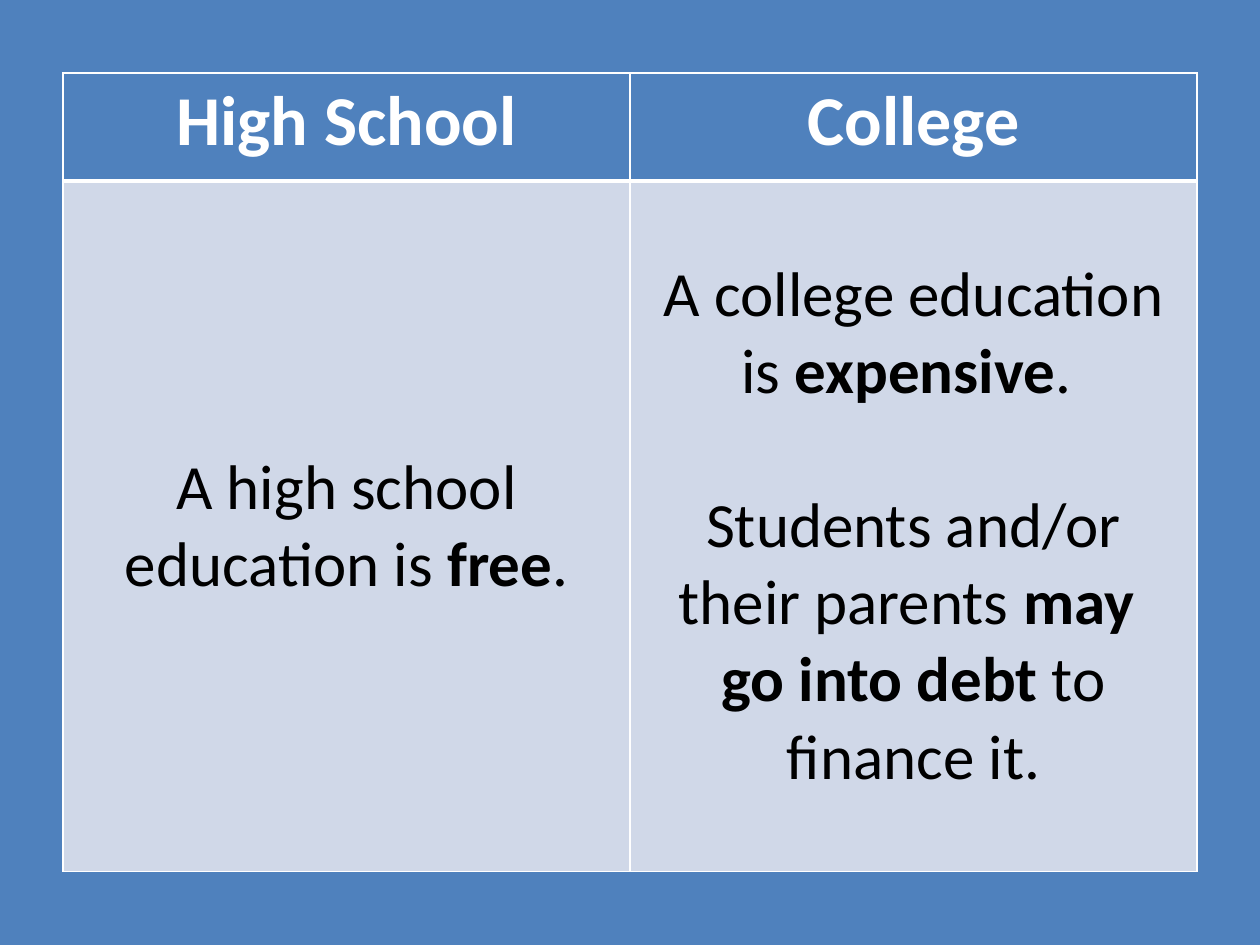
from dataclasses import dataclass

from lxml import etree
from pptx import Presentation
from pptx.dml.color import RGBColor
from pptx.enum.text import MSO_ANCHOR, PP_ALIGN
from pptx.oxml.ns import qn
from pptx.table import _Cell
from pptx.util import Cm, Pt

CENTER = PP_ALIGN.CENTER
TOP = MSO_ANCHOR.TOP
MIDDLE = MSO_ANCHOR.MIDDLE
FONT = "Calibri"
COLORS = {
    "blue": "4F81BD",
    "pale": "D0D8E8",
    "white": "FFFFFF",
    "black": "000000",
}


@dataclass
class Span:
    text: str
    bold: bool = False


@dataclass
class Para:
    spans: list[Span]
    gap: float = 0


@dataclass
class Style:
    fill: str
    ink: str
    size: int
    anchor: MSO_ANCHOR
    edges: dict[str, int]


HEAD = Style("blue", "white", 40, TOP, {"L": 1, "R": 1, "T": 1, "B": 3})
BODY = Style("pale", "black", 36, MIDDLE, {"L": 1, "R": 1, "T": 3, "B": 1})

ROWS = [
    (HEAD, [
        [Para([Span("High School", True)])],
        [Para([Span("College", True)])],
    ]),
    (BODY, [
        [Para([Span("A high school education is "), Span("free", True), Span(".")])],
        [
            Para([Span("A college education is "), Span("expensive", True), Span(". ")]),
            Para([Span("Students and/or their parents "), Span("may ", True)], 44),
            Para([Span("go into debt", True), Span(" to finance it.")]),
        ],
    ]),
]


def color(name: str) -> RGBColor:
    return RGBColor.from_string(COLORS[name])


def add_edges(cell: _Cell, edges: dict[str, int]) -> None:
    props = cell._tc.get_or_add_tcPr()
    for side, width in edges.items():
        line = etree.SubElement(props, qn(f"a:ln{side}"), w=str(Pt(width)))
        fill = etree.SubElement(line, qn("a:solidFill"))
        etree.SubElement(fill, qn("a:srgbClr"), val=COLORS["white"])


def fill_cell(cell: _Cell, paras: list[Para], style: Style) -> None:
    add_edges(cell, style.edges)
    cell.fill.solid()
    cell.fill.fore_color.rgb = color(style.fill)
    cell.vertical_anchor = style.anchor
    frame = cell.text_frame
    frame.text = "\n".join(para.spans[0].text for para in paras)
    for para, item in zip(paras, frame.paragraphs):
        item.alignment = CENTER
        item.space_before = Pt(para.gap)
        for span in para.spans[1:]:
            item.add_run().text = span.text
        for span, run in zip(para.spans, item.runs):
            run.font.name = FONT
            run.font.size = Pt(style.size)
            run.font.bold = span.bold
            run.font.color.rgb = color(style.ink)


def main() -> None:
    deck = Presentation()
    deck.slide_width, deck.slide_height = Cm(25.4), Cm(19.05)
    slide = deck.slides.add_slide(deck.slide_layouts[6])
    back = slide.background.fill
    back.solid()
    back.fore_color.rgb = color("blue")

    frame = slide.shapes.add_table(2, 2, Cm(1.27), Cm(1.47), Cm(22.86), Cm(16.1))
    table = frame.table
    for row, high in zip(table.rows, (2.18, 13.92)):
        row.height = Cm(high)
    for row, (style, cells) in zip(table.rows, ROWS):
        for cell, paras in zip(row.cells, cells):
            fill_cell(cell, paras, style)
    deck.save("out.pptx")


if __name__ == "__main__":
    main()
